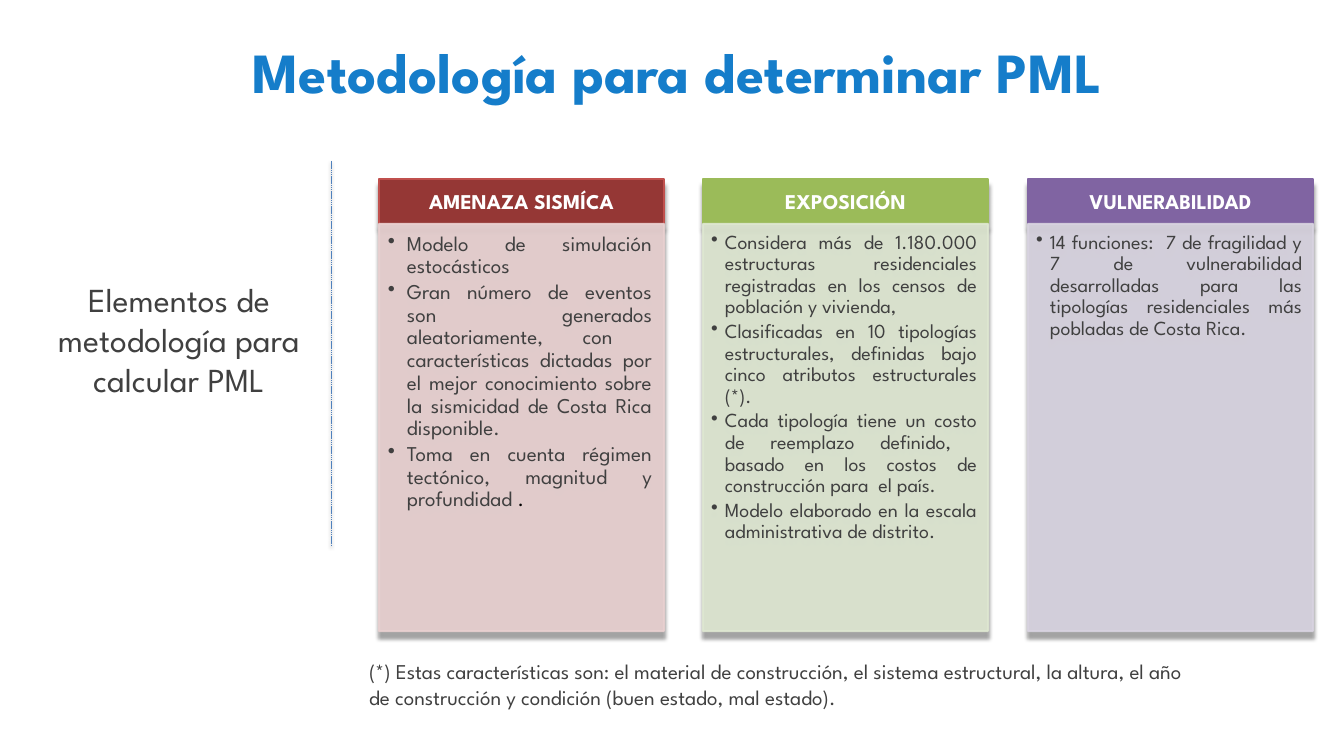
import dataclasses

import lxml.etree
import pptx
import pptx.dml.color
import pptx.enum.dml
import pptx.enum.shapes
import pptx.enum.text
import pptx.oxml.ns
import pptx.util

PX = 12095  # EMU per pixel
ALIGN = pptx.enum.text.PP_ALIGN
ANCHOR = pptx.enum.text.MSO_ANCHOR


@dataclasses.dataclass(frozen=True)
class Theme:
    font: str = "League Spartan"
    title: str = "157DCA"
    text: str = "404040"
    white: str = "FFFFFF"
    black: str = "000000"
    divider: str = "4F81BD"
    title_size: int = 54
    side_size: int = 32
    text_size: int = 20
    small_size: int = 19


@dataclasses.dataclass(frozen=True)
class Card:
    heading: str
    head_fill: str
    head_line: str
    body_fill: str
    size: int
    indent: int
    insets: tuple
    bullets: tuple
    closing: str = ""


THEME = Theme()
CARDS = (
    Card("AMENAZA SISMÍCA", "953735", "C0504D", "E8D0D0",
         THEME.text_size, 19, (9, 9, 12, 13), (
             "Modelo de simulación estocásticos",
             "Gran número de eventos son generados aleatoriamente, con  características "
             "dictadas por el mejor conocimiento sobre la sismicidad de Costa Rica disponible.",
             "Toma en cuenta régimen tectónico, magnitud y profundidad ",
         ), closing="."),
    Card("EXPOSICIÓN", "9BBB59", "9BBB59", "DEE7D1",
         THEME.small_size, 14, (8, 8, 11, 13), (
             "Considera más de 1.180.000 estructuras residenciales registradas en los "
             "censos de población y vivienda,",
             "Clasificadas en 10 tipologías estructurales, definidas bajo cinco atributos "
             "estructurales (*).",
             "Cada tipología tiene un costo de reemplazo definido,  basado en los costos "
             "de construcción para  el país.",
             "Modelo elaborado en la escala administrativa de distrito.",
         )),
    Card("VULNERABILIDAD", "8064A2", "8064A2", "D8D3E0",
         THEME.small_size, 14, (8, 8, 11, 13), (
             "14 funciones:  7 de fragilidad y 7 de vulnerabilidad desarrolladas para las "
             "tipologías residenciales más pobladas de Costa Rica.",
         )),
)


def rgb(color):
    return pptx.dml.color.RGBColor.from_string(color)


def child(parent, tag, **attributes):
    return lxml.etree.SubElement(parent, pptx.oxml.ns.qn(tag), attributes)


def px(*lengths):
    return [length * PX for length in lengths]


def style_run(r, size, color, bold=False):
    r.font.name = THEME.font
    r.font.size = pptx.util.Pt(size)
    r.font.bold = bold
    r.font.color.rgb = rgb(color)


def set_frame(tf, insets, anchor):
    tf.word_wrap = True
    tf.vertical_anchor = anchor
    tf.margin_left, tf.margin_top, tf.margin_right, tf.margin_bottom = px(*insets)


def write(tf, text, size, color, bold=False, align=ALIGN.CENTER):
    tf.text = text
    p = tf.paragraphs[0]
    p.alignment = align
    style_run(p.runs[0], size, color, bold)


def add_shadow(shape, blur, distance):
    effects = child(shape._element.spPr, "a:effectLst")
    shadow = child(effects, "a:outerShdw", blurRad=str(pptx.util.Pt(blur)),
                   dist=str(pptx.util.Pt(distance)), dir="5400000", rotWithShape="0")
    child(child(shadow, "a:srgbClr", val=THEME.black), "a:alpha", val="40000")


def add_text(s, box, text, size, color, bold=False, align=ALIGN.CENTER,
             insets=(8, 4, 8, 4), anchor=ANCHOR.MIDDLE):
    tf = s.shapes.add_textbox(*px(*box)).text_frame
    set_frame(tf, insets, anchor)
    write(tf, text, size, color, bold, align)


def add_panel(s, box, fill, line, opacity=100):
    sp = s.shapes.add_shape(pptx.enum.shapes.MSO_SHAPE.RECTANGLE, *px(*box))
    sp.fill.solid()
    sp.fill.fore_color.rgb = rgb(fill)
    sp.line.color.rgb = rgb(line)
    sp.line.width = pptx.util.Pt(2)
    if opacity < 100:
        for color in sp._element.spPr.iter(pptx.oxml.ns.qn("a:srgbClr")):
            child(color, "a:alpha", val=str(opacity * 1000))
    add_shadow(sp, 4, 6)
    return sp


def add_bullets(tf, card):
    for i, text in enumerate(card.bullets):
        p = tf.paragraphs[0] if i == 0 else tf.add_paragraph()
        p.text = text
        p.alignment = ALIGN.JUSTIFY
        p.line_spacing = 0.9
        p.space_after = pptx.util.Pt(3)
        pPr = p._p.get_or_add_pPr()
        pPr.set("marL", str(card.indent * PX))
        pPr.set("indent", str(-card.indent * PX))
        child(pPr, "a:buChar", char="•")
        style_run(p.runs[0], card.size, THEME.text)
    if card.closing:
        r = p.add_run()
        r.text = card.closing
        style_run(r, card.size, THEME.black)


def add_card(s, left, card):
    head = add_panel(s, (left, 179, 285, 45), card.head_fill, card.head_line)
    set_frame(head.text_frame, (12, 7, 12, 7), ANCHOR.MIDDLE)
    write(head.text_frame, card.heading, THEME.text_size, THEME.white, bold=True)

    body = add_panel(s, (left, 224, 285, 407), card.body_fill, card.body_fill, opacity=90)
    set_frame(body.text_frame, card.insets, ANCHOR.TOP)
    add_bullets(body.text_frame, card)


def add_divider(s, x, top, bottom):
    line = s.shapes.add_connector(pptx.enum.shapes.MSO_CONNECTOR.STRAIGHT,
                                  *px(x, top, x, bottom))
    line.line.color.rgb = rgb(THEME.divider)
    line.line.width = pptx.util.Pt(0.5)
    line.line.dash_style = pptx.enum.dml.MSO_LINE.SQUARE_DOT
    add_shadow(line, 3, 2)


def main():
    prs = pptx.Presentation()
    prs.slide_width, prs.slide_height = px(1344, 735)
    s = prs.slides.add_slide(prs.slide_layouts[6])

    # Title
    add_text(s, (167, 27, 1021, 88), "Metodología para determinar PML",
             THEME.title_size, THEME.title, bold=True)

    # Cards, evenly spaced
    for i, card in enumerate(CARDS):
        add_card(s, 379 + i * 649 // 2, card)

    # Footnote
    add_text(s, (361, 655, 837, 63),
             "(*) Estas características son: el material de construcción, el sistema "
             "estructural, la altura, el año de construcción y condición (buen estado, "
             "mal estado).",
             THEME.text_size, THEME.text, align=ALIGN.LEFT, anchor=ANCHOR.TOP)

    # Side label and divider
    add_text(s, (26, 272, 306, 134), "Elementos de metodología para calcular PML",
             THEME.side_size, THEME.text, insets=(12, 6, 12, 6))
    add_divider(s, 331, 161, 546)

    prs.save("out.pptx")


if __name__ == "__main__":
    main()
